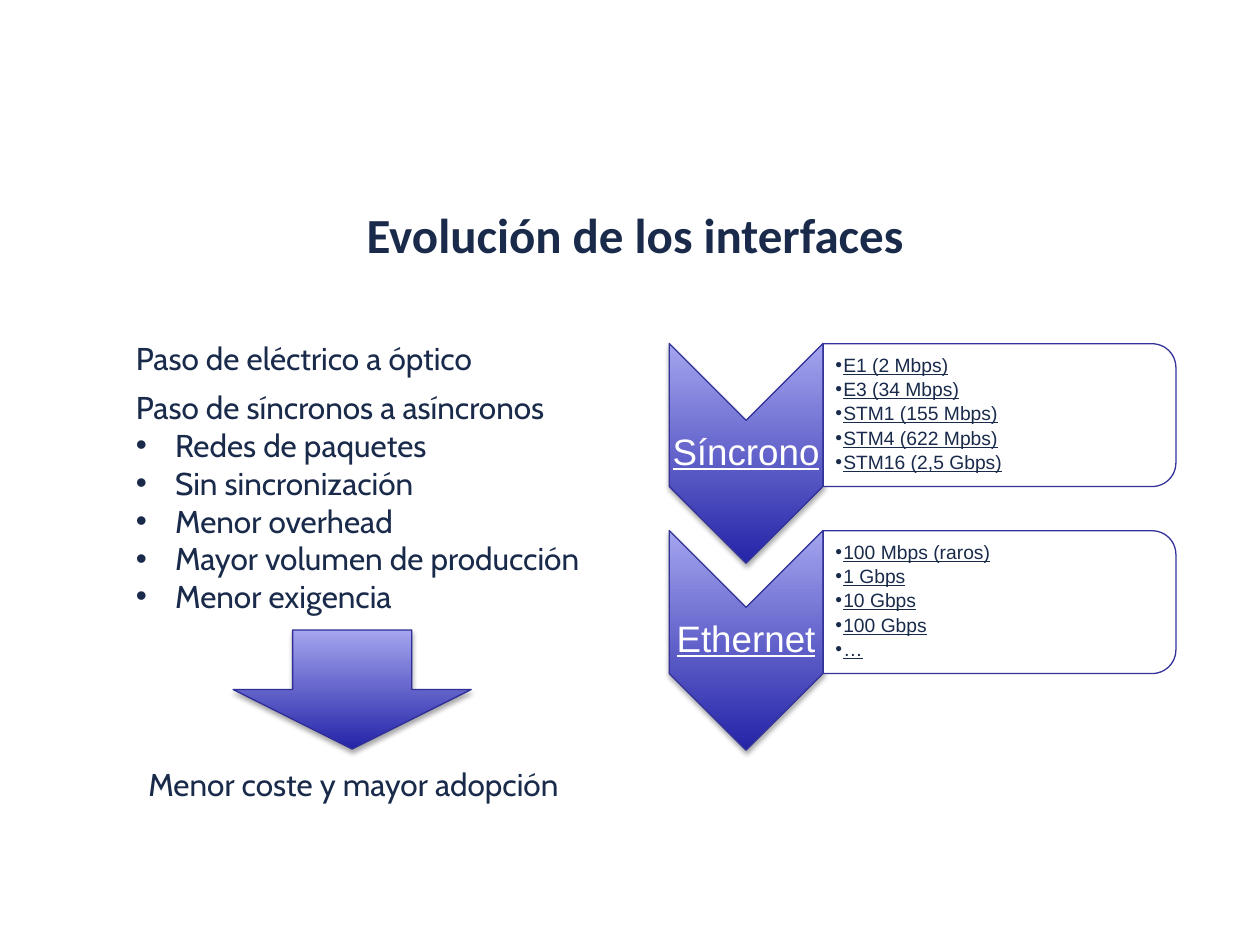
import dataclasses

import lxml.etree
import pptx
import pptx.dml.color
import pptx.enum.dml
import pptx.enum.shapes
import pptx.enum.text
import pptx.oxml
import pptx.oxml.ns
import pptx.util

Cm = pptx.util.Cm
Pt = pptx.util.Pt
qn = pptx.oxml.ns.qn
Shape = pptx.enum.shapes.MSO_SHAPE
Align = pptx.enum.text.PP_ALIGN
Anchor = pptx.enum.text.MSO_ANCHOR
AutoSize = pptx.enum.text.MSO_AUTO_SIZE


@dataclasses.dataclass(frozen=True)
class Theme:
    ink: str = "192A4A"
    light: str = "FFFFFF"
    dark_blue: str = "2424A8"
    pale_blue: str = "A4A4EF"
    outline: str = "333399"
    arrow_outline: str = "2F2F98"
    title_font: str = "Calibri"
    body_font: str = "Cabin"
    diagram_font: str = "Arial"
    title_size: int = 28
    body_size: int = 18
    label_size: int = 21
    detail_size: int = 11


THEME = Theme()

ADVANTAGES = [
    "Redes de paquetes",
    "Sin sincronización",
    "Menor overhead",
    "Mayor volumen de producción",
    "Menor exigencia",
]
FAMILIES = [
    ("Síncrono", ["E1 (2 Mbps)", "E3 (34 Mbps)", "STM1 (155 Mbps)",
                  "STM4 (622 Mpbs)", "STM16 (2,5 Gbps)"]),
    ("Ethernet", ["100 Mbps (raros)", "1 Gbps", "10 Gbps", "100 Gbps", "…"]),
]
FAMILY_TOP = 9.14
FAMILY_STEP = 3.77


def color(value):
    return pptx.dml.color.RGBColor.from_string(value)


def add_text(slide, frame, lines, font, size, ink=THEME.ink, bold=None,
             underline=None, align=Align.LEFT, spacing=None):
    box = slide.shapes.add_textbox(*map(Cm, frame))
    text_frame = box.text_frame
    text_frame.word_wrap = True
    text_frame.text = "\n".join(lines)
    for para in text_frame.paragraphs:
        para.alignment = align
        if spacing:
            para.line_spacing = spacing
        for span in para.runs:
            span.font.name = font
            span.font.size = Pt(size)
            span.font.bold = bold
            span.font.underline = underline
            span.font.color.rgb = color(ink)
    return text_frame


def add_body(slide, frame, lines, align=Align.LEFT):
    text_frame = add_text(slide, frame, lines, THEME.body_font, THEME.body_size, align=align)
    text_frame.auto_size = AutoSize.SHAPE_TO_FIT_TEXT
    return text_frame


def set_bullets(paragraphs, indent):
    for para in paragraphs:
        properties = para._p.get_or_add_pPr()
        properties.set("marL", str(Cm(indent)))
        properties.set("indent", str(-Cm(indent)))
        bullet_font = lxml.etree.SubElement(properties, qn("a:buFont"))
        bullet_font.set("typeface", "Arial")
        lxml.etree.SubElement(properties, qn("a:buChar")).set("char", "•")


def set_insets(text_frame, left, other):
    text_frame.vertical_anchor = Anchor.MIDDLE
    text_frame.margin_left = Cm(left)
    text_frame.margin_top = text_frame.margin_right = text_frame.margin_bottom = Cm(other)


def add_centered_shape(slide, kind, center, size, outline, rotation=0):
    left, top = (middle - length / 2 for middle, length in zip(center, size))
    shape = slide.shapes.add_shape(kind, Cm(left), Cm(top), *map(Cm, size))
    shape.rotation = rotation
    shape.shadow.inherit = False
    shape.line.color.rgb = color(outline)
    shape.line.width = Pt(0.75)
    return shape


def set_gradient_and_shadow(shape):
    shape.fill.gradient()
    shape.fill.gradient_angle = 90
    for stop, value in zip(shape.fill.gradient_stops, (THEME.dark_blue, THEME.pale_blue)):
        stop.color.rgb = color(value)
    properties = shape._element.spPr
    properties.find(qn("a:gradFill")).set("rotWithShape", "0")
    properties.find(qn("a:effectLst")).append(pptx.oxml.parse_xml(
        f'<a:outerShdw {pptx.oxml.ns.nsdecls("a")} blurRad="{Pt(3.1)}" dist="{Pt(1.8)}" '
        'dir="5400000" rotWithShape="0"><a:srgbClr val="000000">'
        '<a:alpha val="35000"/></a:srgbClr></a:outerShdw>'))


def add_family(slide, middle, name, rates):
    chevron = add_centered_shape(slide, Shape.CHEVRON, (15.04, middle), (4.43, 3.1),
                                 THEME.outline, 90)
    set_gradient_and_shadow(chevron)
    label = add_text(slide, (13.49, middle - 0.66, 3.1, 1.32), [name], THEME.diagram_font,
                     THEME.label_size, THEME.light, underline=True,
                     align=Align.CENTER, spacing=0.9)
    set_insets(label, 0.03, 0.03)

    panel = add_centered_shape(slide, Shape.ROUND_2_SAME_RECTANGLE, (20.15, middle - 0.77),
                               (2.88, 7.11), THEME.outline, 90)
    panel.fill.solid()
    panel.fill.fore_color.rgb = color(THEME.light)
    details = add_text(slide, (16.61, middle - 2.08, 6.96, 2.59), rates, THEME.diagram_font,
                       THEME.detail_size, underline=True, spacing=0.9)
    set_insets(details, 0.23, 0.03)
    set_bullets(details.paragraphs, 0.16)
    for para in details.paragraphs:
        para.space_after = Pt(2)


def main():
    deck = pptx.Presentation()
    deck.slide_width, deck.slide_height = Cm(25.4), Cm(19.05)
    slide = deck.slides.add_slide(deck.slide_layouts[6])

    title = add_text(slide, (1.7, 4.11, 22.2, 1.37), ["Evolución de los interfaces"],
                     THEME.title_font, THEME.title_size, bold=True,
                     align=Align.CENTER, spacing=0.92)
    title.auto_size = AutoSize.SHAPE_TO_FIT_TEXT

    add_body(slide, (2.49, 6.7, 10.39, 1.02), ["Paso de eléctrico a óptico"])
    shift = add_body(slide, (2.49, 7.7, 10.39, 4.88),
                     ["Paso de síncronos a asíncronos", *ADVANTAGES])
    set_bullets(shift.paragraphs[1:], 0.79)

    for index, (name, rates) in enumerate(FAMILIES):
        add_family(slide, FAMILY_TOP + index * FAMILY_STEP, name, rates)

    arrow = add_centered_shape(slide, Shape.DOWN_ARROW, (7.1, 13.9), (4.8, 2.4),
                               THEME.arrow_outline)
    set_gradient_and_shadow(arrow)
    outcome = add_body(slide, (2.49, 15.29, 9.27, 1.02), ["Menor coste y mayor adopción"],
                       Align.CENTER)
    outcome.word_wrap = False

    deck.save("out.pptx")


if __name__ == "__main__":
    main()
